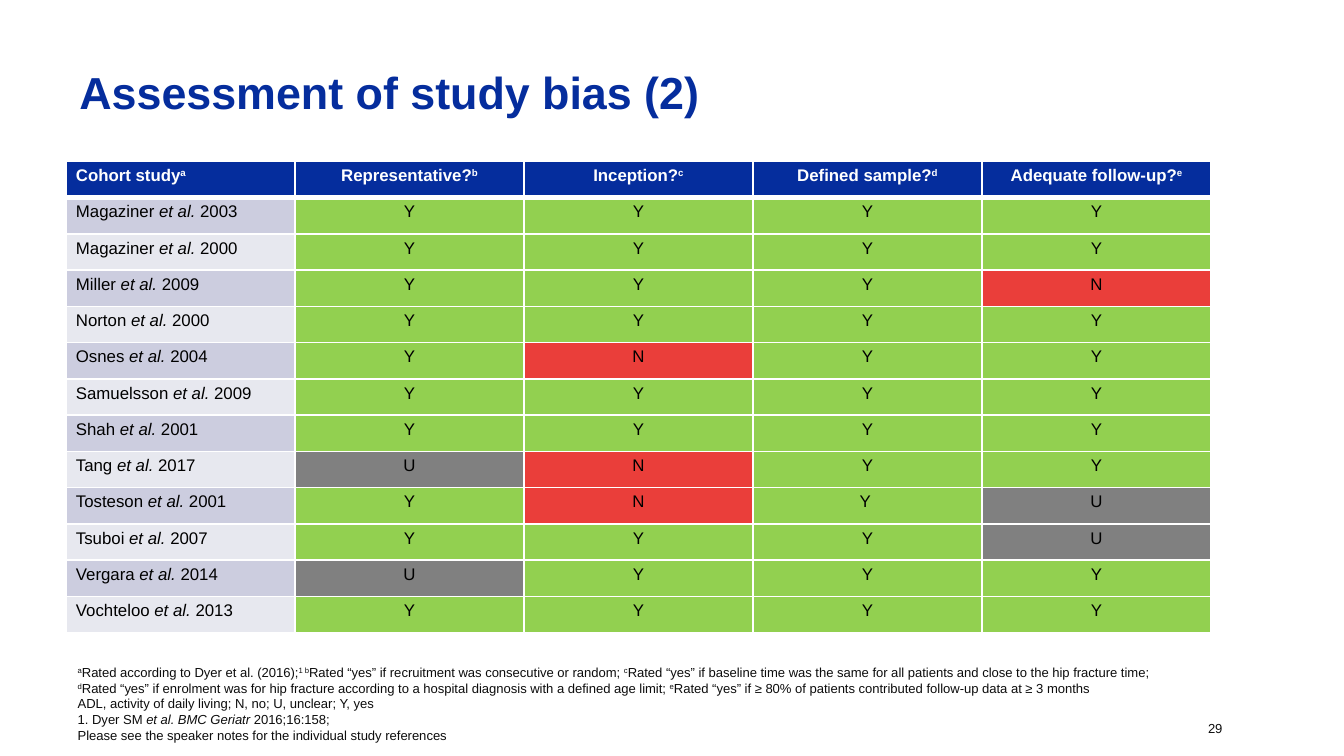
"""Build the slide on study bias: a colour-coded rating table with footnotes."""
import copy

import lxml.etree
import pptx
import pptx.dml.color
import pptx.enum.text
import pptx.oxml.ns
import pptx.util

THEME = {
    "font": "Arial", "title_size": 24, "table_size": 9, "note_size": 7,
    "navy": "052D9D", "ink": "0D0D0D", "black": "000000", "white": "FFFFFF",
    "bands": ("CCCDDF", "E7E8EF"),
    "ratings": {"Y": "92D050", "N": "EA3E3A", "U": "808080"},
}
HEADINGS = ("Cohort study^a^", "Representative?^b^", "Inception?^c^",
            "Defined sample?^d^", "Adequate follow-up?^e^")
STUDIES = (
    ("Magaziner", 2003, "YYYY"),
    ("Magaziner", 2000, "YYYY"),
    ("Miller", 2009, "YYYN"),
    ("Norton", 2000, "YYYY"),
    ("Osnes", 2004, "YNYY"),
    ("Samuelsson", 2009, "YYYY"),
    ("Shah", 2001, "YYYY"),
    ("Tang", 2017, "UNYY"),
    ("Tosteson", 2001, ("Y", "N", "Y ", "U")),
    ("Tsuboi", 2007, "YYYU"),
    ("Vergara", 2014, "UYYY"),
    ("Vochteloo", 2013, "YYYY"),
)
FOOTNOTES = (
    "^a^Rated according to Dyer et al. (2016);^1 b^Rated “yes” if recruitment was "
    "consecutive or random; ^c^Rated “yes” if baseline time was the same for all "
    "patients and close to the hip fracture time; \n^d^Rated “yes” if enrolment was "
    "for hip fracture according to a hospital diagnosis with a defined age limit; "
    "^e^Rated “yes” if ≥ 80% of patients contributed follow-up data at ≥ 3 months",
    "ADL, activity of daily living; N, no; U, unclear; Y, yes",
    "1. Dyer SM *et al. BMC Geriatr *2016;16:158;",
    "Please see the speaker notes for the individual study references",
)


def write(paragraph, text, size, color, bold=False, align="LEFT"):
    """Add text in which ^ encloses superscript and * encloses italics."""
    paragraph.alignment = getattr(pptx.enum.text.PP_ALIGN, align)
    for part, stretch in enumerate(text.split("^")):
        for subpart, piece in enumerate(stretch.split("*")):
            for line, words in enumerate(piece.split("\n")):
                if line:
                    paragraph.add_line_break()
                    paragraph._p[-1].append(copy.deepcopy(run._r.rPr))
                if not words:
                    continue
                run = paragraph.add_run()
                run.text = words
                run.font.name = THEME["font"]
                run.font.size = pptx.util.Pt(size)
                run.font.bold = bold
                run.font.italic = subpart % 2 == 1
                run.font.color.rgb = pptx.dml.color.RGBColor.from_string(color)
                if part % 2:
                    run._r.rPr.set("baseline", "30000")


def border(cell, side, points):
    """Draw one white edge of a table cell."""
    edge = lxml.etree.Element(pptx.oxml.ns.qn(f"a:ln{side}"), w=str(pptx.util.Pt(points)))
    fill = lxml.etree.SubElement(edge, pptx.oxml.ns.qn("a:solidFill"))
    lxml.etree.SubElement(fill, pptx.oxml.ns.qn("a:srgbClr"), val=THEME["white"])
    cell._tc.get_or_add_tcPr().insert("LRTB".index(side), edge)


deck = pptx.Presentation()
deck.slide_width = pptx.util.Inches(10)
deck.slide_height = deck.slide_width * 9 // 16
column, row = deck.slide_width // 100, deck.slide_height // 100
slide = deck.slides.add_slide(deck.slide_layouts[5])

title = slide.shapes.title
title.left, title.top = int(4.9 * column), int(4.35 * row)
title.width, title.height = int(85.2 * column), int(16.9 * row)
title.text_frame.auto_size = pptx.enum.text.MSO_AUTO_SIZE.NONE
title.text_frame.vertical_anchor = pptx.enum.text.MSO_ANCHOR.MIDDLE
heading = title.text_frame.paragraphs[0]
heading.line_spacing = 0.8
write(heading, "Assessment of study bias (2)", THEME["title_size"], THEME["navy"], bold=True)

ratings = slide.shapes.add_table(
    len(STUDIES) + 1, len(HEADINGS), int(4.9 * column), int(21.35 * row),
    int(85.2 * column), int(62.4 * row)).table
ratings.horz_banding = False
lines = [HEADINGS] + [(f"{author} *et al. *{year}", *marks) for author, year, marks in STUDIES]
for rank, line in enumerate(lines):
    for place, text in enumerate(line):
        cell = ratings.cell(rank, place)
        cell.margin_left = cell.margin_right = pptx.util.Pt(5.4)
        cell.margin_top = cell.margin_bottom = pptx.util.Pt(2.7)
        if rank == 0:
            shade = THEME["navy"]
        elif place == 0:
            shade = THEME["bands"][(rank - 1) % 2]
        else:
            shade = THEME["ratings"][text.strip()]
        cell.fill.solid()
        cell.fill.fore_color.rgb = pptx.dml.color.RGBColor.from_string(shade)
        for side in "LRTB":
            under_header = (rank, side) in ((0, "B"), (1, "T"))
            border(cell, side, 3 if under_header else 1)
        write(cell.text_frame.paragraphs[0], text, THEME["table_size"],
              THEME["black"] if rank else THEME["white"],
              bold=rank == 0, align="CENTER" if place else "LEFT")

for left, top, width, anchor, paragraphs in (
        (4.8, 95.05, 87, "BOTTOM", FOOTNOTES), (88.9, 94.35, 8, "MIDDLE", ("29",))):
    frame = slide.shapes.add_textbox(
        int(left * column), int(top * row), int(width * column), int(4.1 * row)).text_frame
    frame.word_wrap = True
    frame.vertical_anchor = getattr(pptx.enum.text.MSO_ANCHOR, anchor)
    for rank, text in enumerate(paragraphs):
        paragraph = frame.add_paragraph() if rank else frame.paragraphs[0]
        write(paragraph, text, THEME["note_size"], THEME["ink"])

deck.save("out.pptx")
